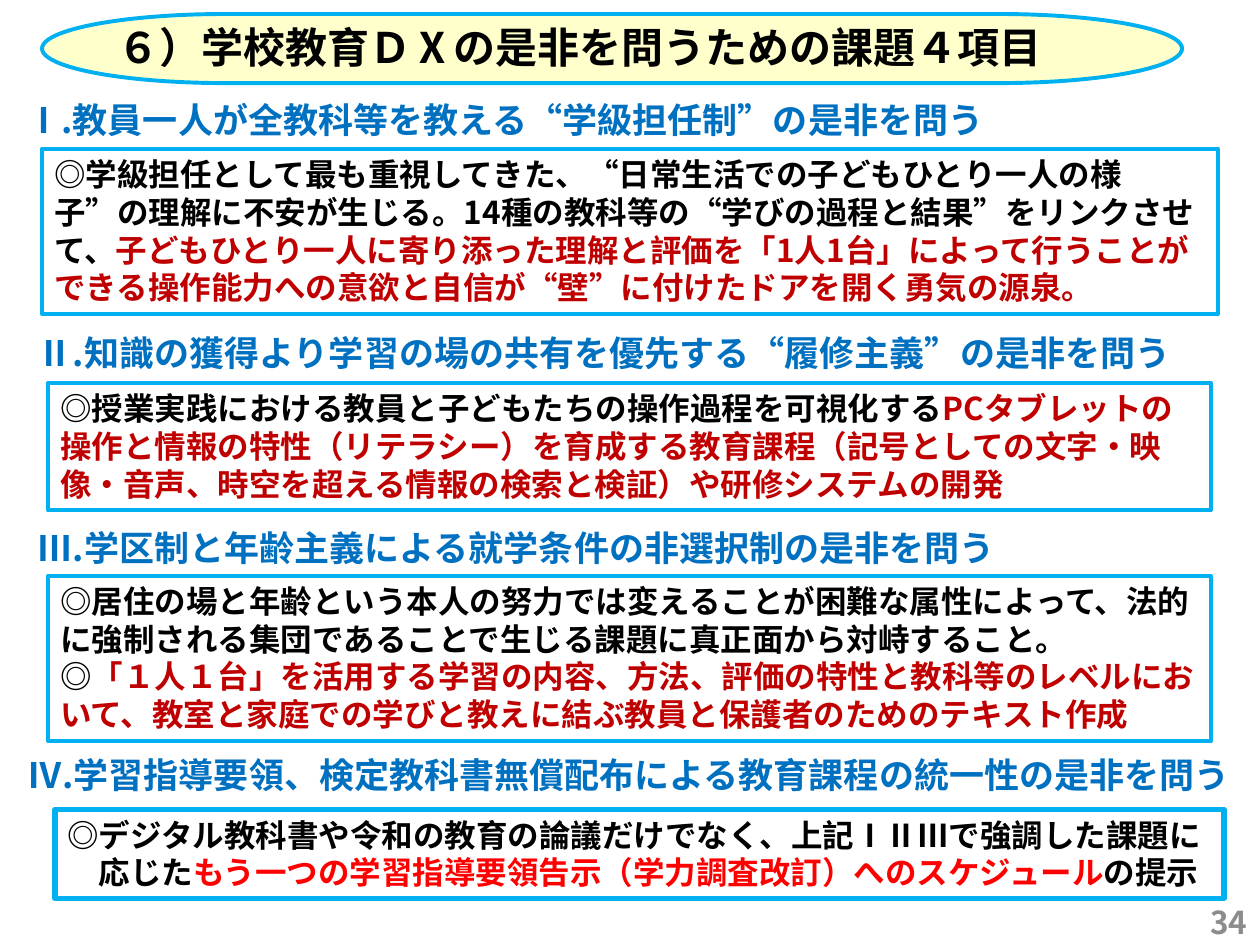
from pptx import Presentation
from pptx.dml.color import RGBColor
from pptx.enum.shapes import MSO_SHAPE
from pptx.enum.text import MSO_ANCHOR, MSO_AUTO_SIZE, PP_ALIGN
from pptx.oxml.ns import qn
from pptx.util import Pt
from lxml import etree

RECTANGLE = MSO_SHAPE.RECTANGLE
TERMINATOR = MSO_SHAPE.FLOWCHART_TERMINATOR
TOP, MIDDLE = MSO_ANCHOR.TOP, MSO_ANCHOR.MIDDLE
LEFT, RIGHT = PP_ALIGN.LEFT, PP_ALIGN.RIGHT
GROW, FIXED = MSO_AUTO_SIZE.SHAPE_TO_FIT_TEXT, MSO_AUTO_SIZE.NONE

FONT = "Noto Sans CJK JP"
COLORS = {
    "black": "000000",
    "heading": "0070C0",
    "dark_red": "C00000",
    "red": "FF0000",
    "gray": "8C8C8C",
    "border": "00B0F0",
    "cream": "FFFFCC",
}

# Each section: heading, its place, then its box: place, line width, paragraphs of (text, colour)
SECTIONS = [
    ("Ⅰ.教員一人が全教科等を教える“学級担任制”の是非を問う", (8, 53, 575, 31.5),
     (24, 85, 672, 94.5), 2.25,
     [[("◎学級担任として最も重視してきた、“日常生活での子どもひとり一人の様子”の"
        "理解に不安が生じる。14種の教科等の“学びの過程と結果”をリンクさせて、", "black"),
       ("子どもひとり一人に寄り添った理解と評価を「1人1台」によって行うことができる"
        "操作能力への意欲と自信が“壁”に付けたドアを開く勇気の源泉。", "dark_red")]]),
    ("Ⅱ.知識の獲得より学習の場の共有を優先する“履修主義”の是非を問う", (14.5, 186, 672, 31.5),
     (27.5, 219, 664.5, 72.7), 2.25,
     [[("◎授業実践における教員と子どもたちの操作過程を可視化する", "black"),
       ("PCタブレットの操作と情報の特性（リテラシー）を育成する教育課程"
        "（記号としての文字・映像・音声、時空を超える情報の検索と検証）や"
        "研修システムの開発", "dark_red")]]),
    ("Ⅲ.学区制と年齢主義による就学条件の非選択制の是非を問う", (14.5, 297.5, 639, 31.5),
     (27.5, 329, 664.5, 94.5), 2.25,
     [[("◎居住の場と年齢という本人の努力では変えることが困難な属性によって、"
        "法的に強制される集団であることで生じる課題に真正面から対峙すること。", "black")],
      [("◎", "black"),
       ("「１人１台」を活用する学習の内容、方法、評価の特性と教科等のレベルにおいて、"
        "教室と家庭での学びと教えに結ぶ教員と保護者のためのテキスト作成", "dark_red")]]),
    ("Ⅳ.学習指導要領、検定教科書無償配布による教育課程の統一性の是非を問う", (8.5, 427, 716, 31.5),
     (31.5, 462.5, 668, 51), 3,
     [[("◎デジタル教科書や令和の教育の論議だけでなく、上記ⅠⅡⅢで強調した課題に", "black")],
      [("　応じた", "black"),
       ("もう一つの学習指導要領告示（学力調査改訂）へのスケジュール", "red"),
       ("の提示", "black")]]),
]


def color(name):
    return RGBColor.from_string(COLORS[name])


def write(box, paragraphs, size, align=LEFT, anchor=TOP, auto_size=GROW):
    """Fill a box with bold text, given as paragraphs of (text, colour) spans."""
    frame = box.text_frame
    frame.word_wrap = True
    frame.auto_size = auto_size
    frame.vertical_anchor = anchor
    for index, spans in enumerate(paragraphs):
        para = frame.add_paragraph() if index else frame.paragraphs[0]
        para.alignment = align
        for text, color_name in spans:
            span = para.add_run()
            span.text = text
            span.font.name = FONT
            span.font.size = Pt(size)
            span.font.bold = True
            span.font.color.rgb = color(color_name)
            east_asian = etree.SubElement(span.font._element, qn("a:ea"))
            east_asian.set("typeface", FONT)


def add_label(page, place, text, size, color_name, **layout):
    box = page.shapes.add_textbox(*map(Pt, place))
    write(box, [[(text, color_name)]], size, **layout)


def add_panel(page, kind, place, line_width, fill=None):
    panel = page.shapes.add_shape(kind, *map(Pt, place))
    panel.shadow.inherit = False
    if fill:
        panel.fill.solid()
        panel.fill.fore_color.rgb = color(fill)
    else:
        panel.fill.background()
    panel.line.color.rgb = color("border")
    panel.line.width = Pt(line_width)
    return panel


def main():
    deck = Presentation()
    deck.slide_width, deck.slide_height = Pt(720), Pt(540)
    page = deck.slides.add_slide(deck.slide_layouts[6])

    # Title band
    add_panel(page, TERMINATOR, (24, 8, 651.5, 39.5), 2.25, "cream")
    add_label(page, (60, 8.5, 561, 36), "６）学校教育ＤⅩの是非を問うための課題４項目", 24, "black")

    # Four issues
    for heading, heading_place, panel_place, line_width, paragraphs in SECTIONS:
        add_label(page, heading_place, heading, 20, "heading")
        panel = add_panel(page, RECTANGLE, panel_place, line_width)
        write(panel, paragraphs, 18)

    # Page number
    add_label(page, (679, 512.5, 41, 29), "34", 18, "gray",
              align=RIGHT, anchor=MIDDLE, auto_size=FIXED)

    deck.save("out.pptx")


if __name__ == "__main__":
    main()
